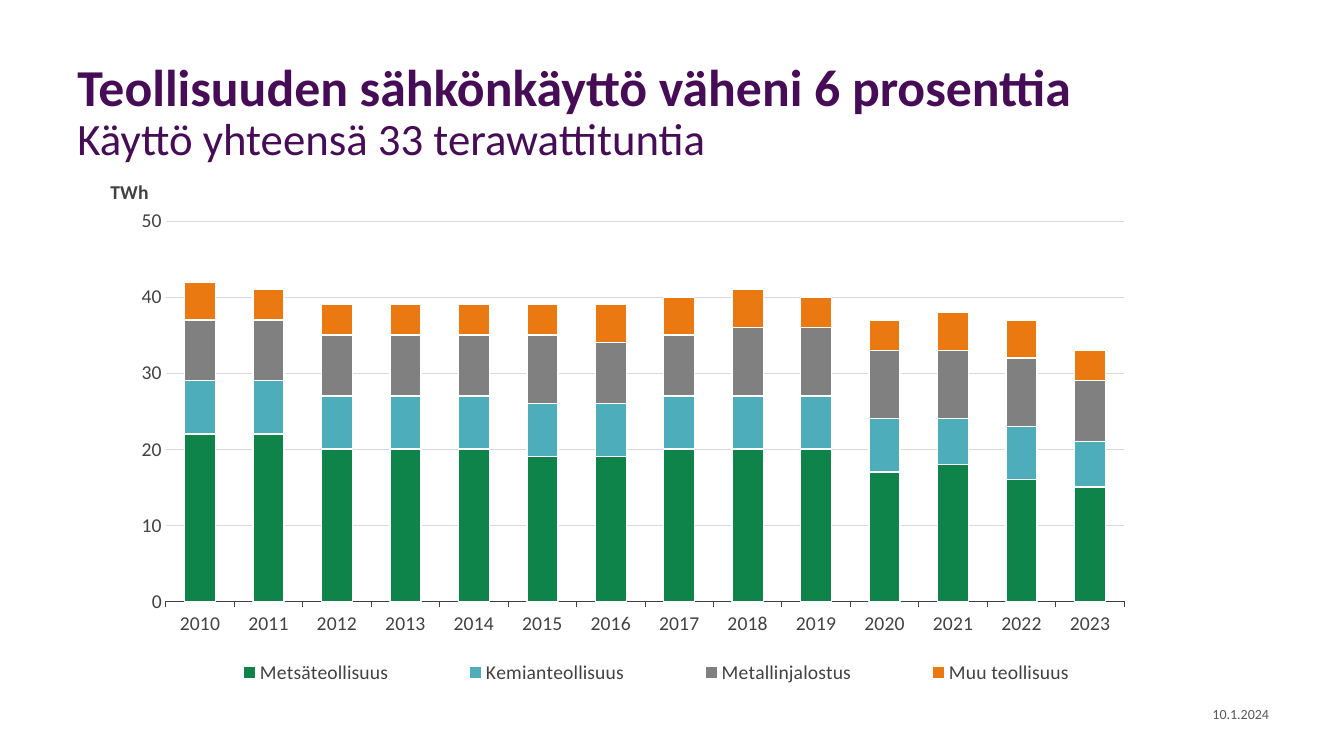
import pptx
import pptx.util
import pptx.dml.color
import pptx.chart.data
import pptx.enum.chart
import pptx.enum.text
from lxml import etree
from pptx.oxml.ns import qn

Cm = pptx.util.Cm
Pt = pptx.util.Pt
kinds = pptx.enum.chart

theme = {
    "font": "Calibri",
    "title": "460D56",
    "date": "595959",
    "label": "424242",
    "axis": "404040",
    "grid": "D9D9D9",
    "edge": "FFFFFF",
    "bars": ["0F844A", "4EADBB", "808080", "EA7911"],
    "head": 37,
    "sub": 32,
    "text": 14,
    "small": 10,
}


def style(font, size, color, bold=False):
    font.name = theme["font"]
    font.size = Pt(size)
    font.bold = bold
    font.color.rgb = pptx.dml.color.RGBColor.from_string(color)


def place(part, index, inner=False, **spots):
    for old in part.findall(qn("c:layout")):
        part.remove(old)
    layout = etree.Element(qn("c:layout"))
    manual = etree.SubElement(layout, qn("c:manualLayout"))
    if inner:
        etree.SubElement(manual, qn("c:layoutTarget")).set("val", "inner")
    for mode in ("xMode", "yMode"):
        etree.SubElement(manual, qn("c:" + mode)).set("val", "edge")
    for key, value in spots.items():
        etree.SubElement(manual, qn("c:" + key)).set("val", str(value))
    part.insert(index, layout)


deck = pptx.Presentation()
deck.slide_width = Cm(33.87)
deck.slide_height = Cm(19.05)
slide = deck.slides.add_slide(deck.slide_layouts[6])

box = slide.shapes.add_textbox(Cm(1.7), Cm(1.02), Cm(26.34), Cm(3.68))
frame = box.text_frame
frame.word_wrap = True
frame.vertical_anchor = pptx.enum.text.MSO_ANCHOR.MIDDLE
para = frame.paragraphs[0]
para.line_spacing = 0.9
run = para.add_run()
run.text = "Teollisuuden sähkönkäyttö väheni 6 prosenttia"
style(run.font, theme["head"], theme["title"], True)
para.add_line_break()
run = para.add_run()
run.text = "Käyttö yhteensä 33 terawattituntia"
style(run.font, theme["sub"], theme["title"])

data = pptx.chart.data.CategoryChartData(number_format="0")
data.categories = [str(year) for year in range(2010, 2024)]
usage = {
    "Metsäteollisuus": [22, 22, 20, 20, 20, 19, 19, 20, 20, 20, 17, 18, 16, 15],
    "Kemianteollisuus": [7, 7, 7, 7, 7, 7, 7, 7, 7, 7, 7, 6, 7, 6],
    "Metallinjalostus": [8, 8, 8, 8, 8, 9, 8, 8, 9, 9, 9, 9, 9, 8],
    "Muu teollisuus": [5, 4, 4, 4, 4, 4, 5, 5, 5, 4, 4, 5, 5, 4],
}
for name, values in usage.items():
    data.add_series(name, values)

chart = slide.shapes.add_chart(
    kinds.XL_CHART_TYPE.COLUMN_STACKED,
    Cm(2.69), Cm(4.27), Cm(26.14), Cm(13.13), data,
).chart
chart.has_title = False
style(chart.font, theme["small"], theme["label"])

plot = chart.plots[0]
plot.gap_width = 120
plot.overlap = 100
plot.vary_by_categories = False
for series, color in zip(plot.series, theme["bars"]):
    series.format.fill.solid()
    series.format.fill.fore_color.rgb = pptx.dml.color.RGBColor.from_string(color)
    series.format.line.width = Pt(1)
    series.format.line.color.rgb = pptx.dml.color.RGBColor.from_string(theme["edge"])

years = chart.category_axis
years.major_tick_mark = kinds.XL_TICK_MARK.OUTSIDE
years.format.line.width = Pt(0.75)
years.format.line.color.rgb = pptx.dml.color.RGBColor.from_string(theme["axis"])
style(years.tick_labels.font, theme["text"], theme["label"])

scale = chart.value_axis
scale.minimum_scale = 0
scale.maximum_scale = 50
scale.major_unit = 10
scale.major_tick_mark = kinds.XL_TICK_MARK.NONE
scale.format.line.fill.background()
scale.tick_labels.number_format = "0"
scale.tick_labels.number_format_is_linked = False
style(scale.tick_labels.font, theme["text"], theme["label"])
grid = scale.major_gridlines.format.line
grid.width = Pt(0.5)
grid.color.rgb = pptx.dml.color.RGBColor.from_string(theme["grid"])

unit = scale.axis_title
run = unit.text_frame.paragraphs[0].add_run()
run.text = "TWh"
style(run.font, theme["text"], theme["label"], True)
body = unit._element.find(".//" + qn("a:bodyPr"))
body.set("rot", "0")
body.set("vert", "horz")

chart.has_legend = True
legend = chart.legend
legend.position = kinds.XL_LEGEND_POSITION.BOTTOM
legend.include_in_layout = False
style(legend.font, theme["text"], theme["label"])

area = chart._chartSpace.find(".//" + qn("c:plotArea"))
place(area, 0, True, x=0.057, y=0.099, w=0.924, h=0.73)
place(unit._element, 1, x=0, y=0.01)
place(legend._element, 1, x=0.06, y=0.93, w=0.94, h=0.07)

box = slide.shapes.add_textbox(Cm(29.41), Cm(17.65), Cm(2.82), Cm(0.69))
frame = box.text_frame
frame.word_wrap = True
frame.vertical_anchor = pptx.enum.text.MSO_ANCHOR.MIDDLE
para = frame.paragraphs[0]
para.alignment = pptx.enum.text.PP_ALIGN.RIGHT
run = para.add_run()
run.text = "10.1.2024"
style(run.font, theme["small"], theme["date"])

deck.save("out.pptx")
